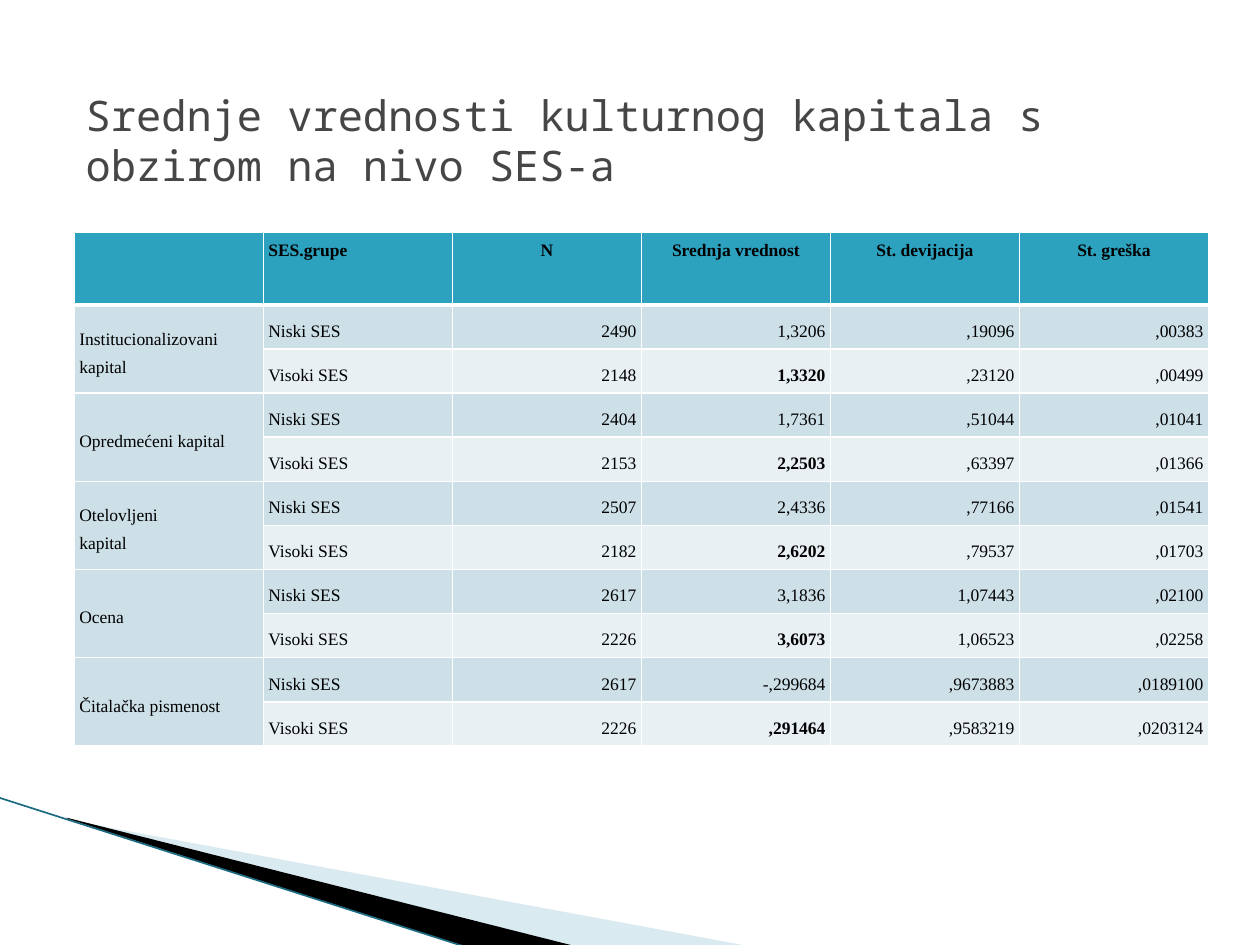
from dataclasses import dataclass
from typing import Optional

from pptx import Presentation
from pptx.dml.color import RGBColor
from pptx.enum.text import MSO_ANCHOR as Anchor, PP_ALIGN as Align
from pptx.oxml.ns import qn
from pptx.util import Inches, Pt
from lxml.etree import SubElement


@dataclass(frozen=True)
class Theme:
    title_font: str = "Noto Sans Mono"
    table_font: str = "Times New Roman"
    title_size: int = 24
    table_size: int = 10
    line_pitch: int = 16
    title_color: str = "464646"
    text: str = "000000"
    header: str = "2DA2BF"
    low_band: str = "CDE0E8"
    high_band: str = "E8F0F4"
    border: str = "FFFFFF"
    edge: str = "1B6B80"


@dataclass(frozen=True)
class Wedge:
    frame: tuple[float, float, float, float]
    points: tuple[tuple[float, float], ...]
    color: str
    opacity: Optional[int] = None


@dataclass(frozen=True)
class Measure:
    label: tuple[str, ...]
    low: tuple[str, ...]
    high: tuple[str, ...]


THEME = Theme()
TITLE = "Srednje vrednosti kulturnog kapitala s obzirom na nivo SES-a"
HEADERS = ("", "SES.grupe", "N", "Srednja vrednost", "St. devijacija", "St. greška")
MEAN_COLUMN = 3
WEDGES = (
    Wedge((0.78, 5.47, 4.16, 1.58),
          ((0.55, 6.51), (5.95, 7.51), (4.56, 7.51), (0.55, 6.5)), "A0CBDC", 40),
    Wedge((-0.06, 6.33, 4.16, 0.92),
          ((0.53, 6.49), (4.57, 7.51), (3.72, 7.52), (0.54, 6.5)), "000000"),
)
MEASURES = (
    Measure(("Institucionalizovani kapital",),
            ("2490", "1,3206", ",19096", ",00383"), ("2148", "1,3320", ",23120", ",00499")),
    Measure(("Opredmećeni kapital",),
            ("2404", "1,7361", ",51044", ",01041"), ("2153", "2,2503", ",63397", ",01366")),
    Measure(("Otelovljeni", "kapital"),
            ("2507", "2,4336", ",77166", ",01541"), ("2182", "2,6202", ",79537", ",01703")),
    Measure(("Ocena",),
            ("2617", "3,1836", "1,07443", ",02100"), ("2226", "3,6073", "1,06523", ",02258")),
    Measure(("Čitalačka pismenost",),
            ("2617", "-,299684", ",9673883", ",0189100"),
            ("2226", ",291464", ",9583219", ",0203124")),
)


def rgb(color: str) -> RGBColor:
    return RGBColor.from_string(color)


def add_span(para, text: str, font: str, size: int, color: str, bold: bool = False) -> None:
    span = para.add_run()
    span.text = text
    span.font.name = font
    span.font.size = Pt(size)
    span.font.bold = bold
    span.font.color.rgb = rgb(color)


def draw_title(page) -> None:
    box = page.shapes.title
    box.left, box.top, box.width, box.height = (Inches(n) for n in (0.58, 0.92, 9, 0.78))
    frame = box.text_frame
    frame.word_wrap = True
    frame.vertical_anchor = Anchor.MIDDLE
    frame.margin_bottom = Inches(0.45)
    para = frame.paragraphs[0]
    para.alignment = Align.LEFT
    para.line_spacing = 1.0
    add_span(para, TITLE, THEME.title_font, THEME.title_size, THEME.title_color)


def reframe(shape, frame: tuple[float, float, float, float]) -> None:
    left, top, width, height = (Inches(n) for n in frame)
    shift_x, shift_y = shape.left - left, shape.top - top
    outline = next(shape._element.iter(qn("a:path")))
    outline.set("w", str(width))
    outline.set("h", str(height))
    for point in outline.iter(qn("a:pt")):
        point.set("x", str(int(point.get("x")) + shift_x))
        point.set("y", str(int(point.get("y")) + shift_y))
    shape.left, shape.top, shape.width, shape.height = left, top, width, height


def draw_wedge(page, wedge: Wedge) -> None:
    start, *rest = [(Inches(x), Inches(y)) for x, y in wedge.points]
    builder = page.shapes.build_freeform(*start)
    builder.add_line_segments(rest, close=True)
    shape = builder.convert_to_shape()
    reframe(shape, wedge.frame)
    shape.shadow.inherit = False
    shape.fill.solid()
    shape.fill.fore_color.rgb = rgb(wedge.color)
    shape.line.fill.background()
    if wedge.opacity is not None:
        color = shape.fill._xPr.find(f"{qn('a:solidFill')}/{qn('a:srgbClr')}")
        SubElement(color, qn("a:alpha"), val=str(wedge.opacity * 1000))


def draw_edge(page) -> None:
    ends = [Inches(n) for n in (-0.01, 6.33, 3.71, 7.52)]
    edge = page.shapes.add_connector(1, *ends)
    edge.line.color.rgb = rgb(THEME.edge)
    edge.line.width = Pt(0.95)
    SubElement(edge._element.spPr, qn("a:effectLst"))


def style_cell(cell, color: str, anchor: Anchor, top: int = 1, bottom: int = 1) -> None:
    properties = cell._tc.get_or_add_tcPr()
    for side, width in (("L", 1), ("R", 1), ("T", top), ("B", bottom)):
        line = SubElement(properties, qn(f"a:ln{side}"), w=str(Pt(width)))
        fill = SubElement(line, qn("a:solidFill"))
        SubElement(fill, qn("a:srgbClr"), val=THEME.border)
    cell.fill.solid()
    cell.fill.fore_color.rgb = rgb(color)
    cell.vertical_anchor = anchor
    cell.margin_left = cell.margin_right = cell.margin_top = cell.margin_bottom = 0


def write_cell(cell, lines: tuple[str, ...], align: Align, bold: bool = False) -> None:
    frame = cell.text_frame
    for index, text in enumerate(lines):
        para = frame.add_paragraph() if index else frame.paragraphs[0]
        para.alignment = align
        para.line_spacing = Pt(THEME.line_pitch)
        properties = para._p.get_or_add_pPr()
        for margin in ("marL", "marR"):
            properties.set(margin, str(Inches(0.04)))
        if text:
            add_span(para, text, THEME.table_font, THEME.table_size, THEME.text, bold)


def draw_table(page) -> None:
    row_count = 1 + 2 * len(MEASURES)
    place = [Inches(n) for n in (0.59, 1.84, 9, 4.08)]
    table = page.shapes.add_table(row_count, len(HEADERS), *place).table
    for column in table.columns:
        column.width = Inches(1.5)
    for index, row in enumerate(table.rows):
        row.height = Inches(0.35 if index else 0.58)

    for column, text in enumerate(HEADERS):
        cell = table.cell(0, column)
        style_cell(cell, THEME.header, Anchor.TOP, bottom=3)
        write_cell(cell, (text,), Align.CENTER if column > 1 else Align.LEFT, True)

    for index, measure in enumerate(MEASURES):
        first = 1 + 2 * index
        table.cell(first, 0).merge(table.cell(first + 1, 0))
        groups = (
            ("Niski SES", measure.low, THEME.low_band, measure.label),
            ("Visoki SES", measure.high, THEME.high_band, ("",)),
        )
        for row, (group, values, band, label) in enumerate(groups, first):
            top = 3 if row == 1 else 1
            contents = (label, (group,), *((value,) for value in values))
            for column, lines in enumerate(contents):
                cell = table.cell(row, column)
                style_cell(cell, band if column else THEME.low_band, Anchor.MIDDLE, top)
                bold = column == MEAN_COLUMN and row > first
                write_cell(cell, lines, Align.RIGHT if column > 1 else Align.LEFT, bold)


def main() -> None:
    deck = Presentation()
    deck.slide_width, deck.slide_height = Inches(10), Inches(7.5)
    page = deck.slides.add_slide(deck.slide_layouts[5])
    draw_title(page)
    for wedge in WEDGES:
        draw_wedge(page, wedge)
    draw_edge(page)
    draw_table(page)
    deck.save("out.pptx")


if __name__ == "__main__":
    main()
